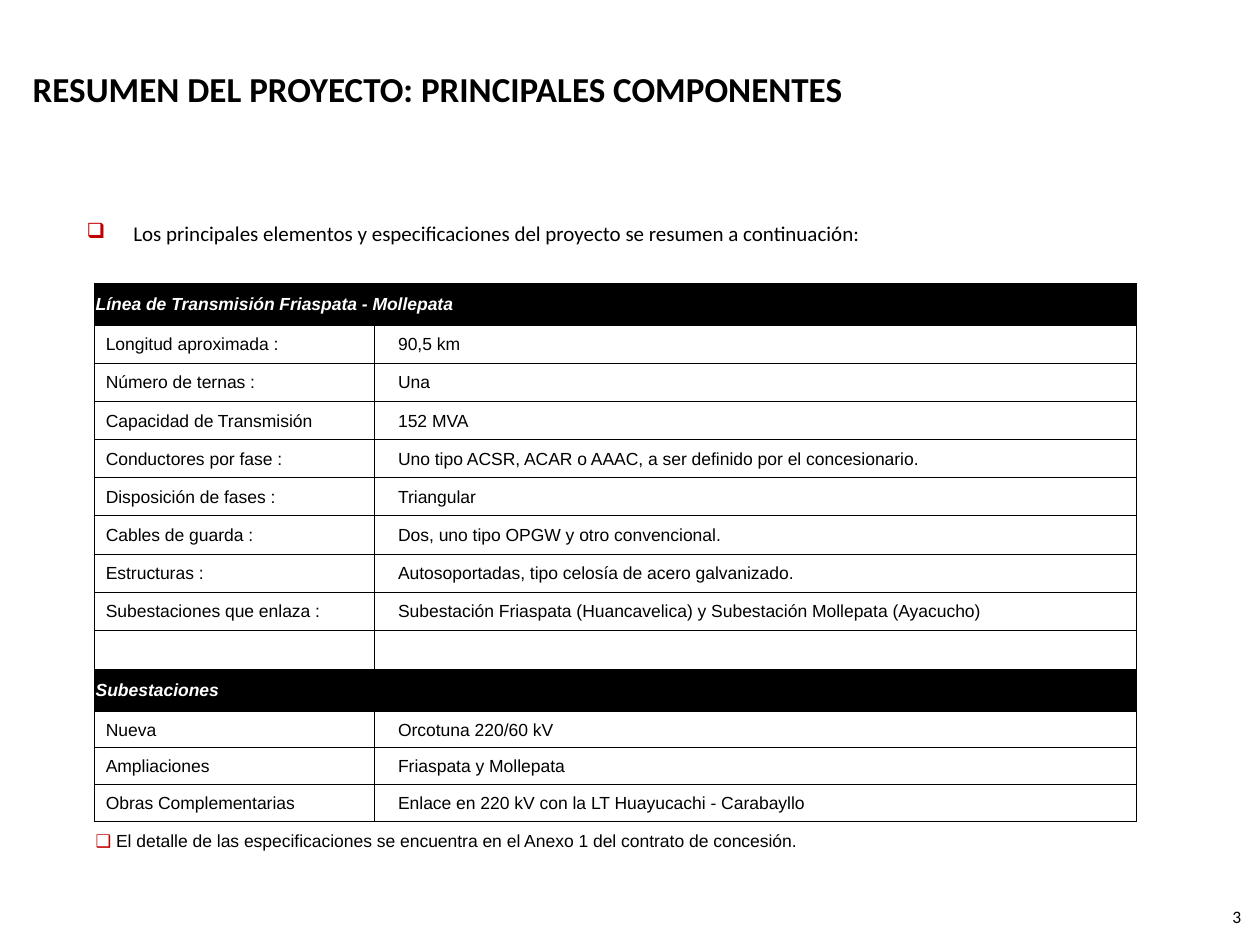
from pptx import Presentation
from pptx.dml.color import RGBColor
from pptx.enum.text import MSO_ANCHOR, MSO_AUTO_SIZE, PP_ALIGN
from pptx.oxml import parse_xml
from pptx.oxml.ns import nsdecls
from pptx.util import Inches, Pt

BLACK = RGBColor(0, 0, 0)
WHITE = RGBColor(255, 255, 255)
RED = RGBColor(0xC0, 0, 0)

TITLE = "RESUMEN DEL PROYECTO: PRINCIPALES COMPONENTES"
INTRO = "Los principales elementos y especificaciones del proyecto se resumen a continuación:"
NOTE = "El detalle de las especificaciones se encuentra en el Anexo 1 del contrato de concesión."
BULLET = "❑"
PAGE = "3"
LINE = [
    ("Longitud aproximada :", "90,5 km"),
    ("Número de ternas :", "Una"),
    ("Capacidad de Transmisión", "152 MVA"),
    ("Conductores por fase :", "Uno tipo ACSR, ACAR o AAAC, a ser definido por el concesionario."),
    ("Disposición de fases :", "Triangular"),
    ("Cables de guarda :", "Dos, uno tipo OPGW y otro convencional."),
    ("Estructuras :", "Autosoportadas, tipo celosía de acero galvanizado."),
    ("Subestaciones que enlaza :",
     "Subestación Friaspata (Huancavelica) y Subestación Mollepata (Ayacucho)"),
    ("", ""),
]
SUBSTATIONS = [
    ("Nueva", "Orcotuna 220/60 kV"),
    ("Ampliaciones", "Friaspata y Mollepata"),
    ("Obras Complementarias", "Enlace en 220 kV con la LT Huayucachi - Carabayllo"),
]
HEAD_H, LINE_H, SUB_H, NOTE_H = 0.33, 0.303, 0.293, 0.3
ROWS = (
    [("head", HEAD_H, ("Línea de Transmisión Friaspata - Mollepata", ""))]
    + [("item", LINE_H, pair) for pair in LINE]
    + [("head", HEAD_H, ("Subestaciones", ""))]
    + [("item", SUB_H, pair) for pair in SUBSTATIONS]
    + [("note", NOTE_H, (NOTE, ""))]
)
COLS = (2.22, 6.05)
INDENTS = (0.09, 0.19)


def style(r, size, name, color=BLACK, bold=False, italic=False):
    f = r.font
    f.size, f.name, f.bold, f.italic = Pt(size), name, bold, italic
    f.color.rgb = color


def hang(p, size):
    pPr = p._p.get_or_add_pPr()
    pPr.set("marL", str(Inches(size)))
    pPr.set("indent", str(-Inches(size)))
    return pPr


def add_text(s, box, text, size, align):
    tf = s.shapes.add_textbox(*map(Inches, box)).text_frame
    tf.word_wrap = True
    tf.text = text
    p = tf.paragraphs[0]
    p.alignment = align
    style(p.runs[0], size, "Calibri")
    return p


def set_borders(cell, sides):
    tcPr = cell._tc.get_or_add_tcPr()
    for i, side in enumerate("LRTB"):
        fill = '<a:solidFill><a:srgbClr val="000000"/></a:solidFill>' if side in sides else "<a:noFill/>"
        tcPr.insert(i, parse_xml(f'<a:ln{side} {nsdecls("a")} w="{Pt(0.5)}">{fill}</a:ln{side}>'))


def fill_cell(cell, kind, col, text):
    cell.margin_left = Inches(INDENTS[col] if kind == "item" else 0.01)
    cell.margin_right = cell.margin_top = Inches(0.01)
    cell.margin_bottom = 0
    cell.vertical_anchor = MSO_ANCHOR.MIDDLE
    head = kind == "head"
    if head:
        cell.fill.solid()
        cell.fill.fore_color.rgb = BLACK
    else:
        cell.fill.background()
    p = cell.text_frame.paragraphs[0]
    if kind == "note" and text:
        r = p.add_run()
        r.text = BULLET + " "
        style(r, 10, "Arial", RED)
    r = p.add_run()
    r.text = text
    style(r, 10, "Arial", WHITE if head else BLACK, head, head)
    set_borders(cell, "T" if kind == "note" else "LRTB")


def add_components(s):
    heights = [h for _, h, _ in ROWS]
    box = (0.75, 2.25, sum(COLS), sum(heights))
    table = s.shapes.add_table(len(ROWS), len(COLS), *map(Inches, box)).table
    table.first_row = table.horz_banding = False
    for column, w in zip(table.columns, COLS):
        column.width = Inches(w)
    for i, (kind, h, texts) in enumerate(ROWS):
        table.rows[i].height = Inches(h)
        for j, text in enumerate(texts):
            fill_cell(table.cell(i, j), kind, j, text)
    for i in (0, len(ROWS) - 1):
        table.cell(i, 0).merge(table.cell(i, 1))


def main():
    prs = Presentation()
    prs.slide_width, prs.slide_height = Inches(10), Inches(7.5)
    s = prs.slides.add_slide(prs.slide_layouts[5])

    title = s.shapes.title
    title.left, title.top, title.width, title.height = map(Inches, (0.16, 0.41, 9.44, 0.58))
    tf = title.text_frame
    tf.text = TITLE
    tf.auto_size = MSO_AUTO_SIZE.NONE
    tf.vertical_anchor = MSO_ANCHOR.MIDDLE
    p = tf.paragraphs[0]
    p.alignment = PP_ALIGN.LEFT
    hang(p, 0.38)
    style(p.runs[0], 20, "Calibri", bold=True)

    p = add_text(s, (0.59, 1.7, 6.54, 0.31), INTRO, 12, PP_ALIGN.JUSTIFY)
    pPr = hang(p, 0.37)
    pPr.append(parse_xml(f'<a:buClr {nsdecls("a")}><a:srgbClr val="{RED}"/></a:buClr>'))
    pPr.append(parse_xml(f'<a:buChar {nsdecls("a")} char="{BULLET}"/>'))

    add_text(s, (9.45, 7.14, 0.5, 0.32), PAGE, 10, PP_ALIGN.RIGHT)
    add_components(s)
    prs.save("out.pptx")


if __name__ == "__main__":
    main()
